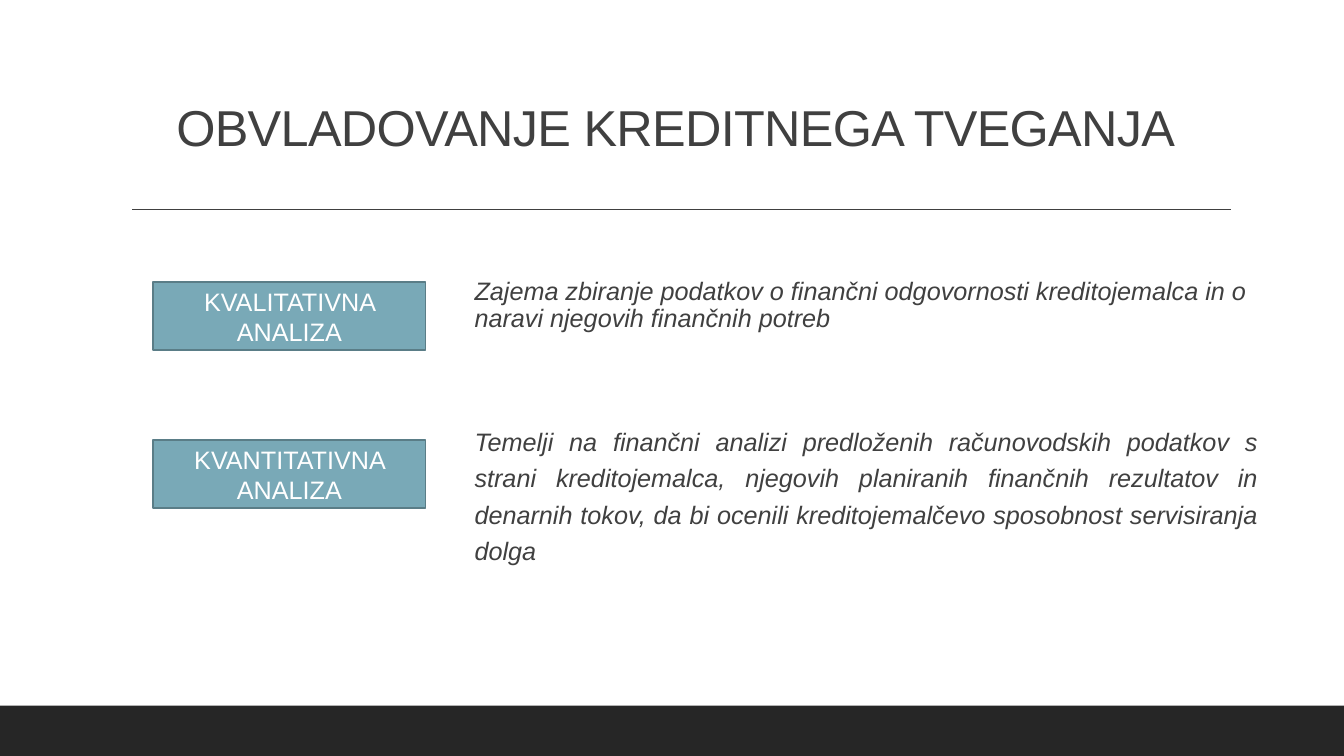
import pptx
import pptx.util
import pptx.dml.color
import pptx.enum.shapes
import pptx.enum.text
import pptx.oxml

Pt = pptx.util.Pt
Align = pptx.enum.text.PP_ALIGN
Anchor = pptx.enum.text.MSO_ANCHOR
Shape = pptx.enum.shapes.MSO_SHAPE
Line = pptx.enum.shapes.MSO_CONNECTOR


def color(code):
    return pptx.dml.color.RGBColor.from_string(code)


def apply(item, values):
    for name, value in values.items():
        setattr(item, name, value)


class Page:
    ink = "404040"
    teal = "79A9B7"
    edge = "5A7D87"
    dark = "262626"
    white = "FFFFFF"
    face = "Arial"

    def __init__(self, slide):
        self.slide = slide

    def text(self, frame, lines, tone, font, para):
        frame.word_wrap = True
        for index, line in enumerate(lines):
            part = frame.paragraphs[0] if index == 0 else frame.add_paragraph()
            apply(part, para)
            run = part.add_run()
            run.text = line
            apply(run.font, {"name": self.face, **font})
            run.font.color.rgb = color(tone)

    def rect(self, left, top, width, height, fill, edge=None):
        shape = self.slide.shapes.add_shape(
            Shape.RECTANGLE, Pt(left), Pt(top), Pt(width), Pt(height))
        shape.shadow.inherit = False
        shape.fill.solid()
        shape.fill.fore_color.rgb = color(fill)
        if edge:
            shape.line.color.rgb = color(edge)
            shape.line.width = Pt(1.25)
        else:
            shape.line.fill.background()
        return shape

    def label(self, top, words):
        shape = self.rect(109.5, top, 194.5, 48.5, self.teal, self.edge)
        shape.text_frame.vertical_anchor = Anchor.MIDDLE
        self.text(shape.text_frame, [words], self.white,
                  {"size": Pt(18)}, {"alignment": Align.CENTER})

    def rule(self, left, top, right):
        line = self.slide.shapes.add_connector(
            Line.STRAIGHT, Pt(left), Pt(top), Pt(right), Pt(top))
        line.line.color.rgb = color(self.ink)
        line.line.width = Pt(1)
        props = line._element.spPr
        props.append(pptx.oxml.parse_xml(
            '<a:effectLst xmlns:a="http://schemas.openxmlformats.org/drawingml/2006/main"/>'))

    def box(self, left, top, width, height):
        return self.slide.shapes.add_textbox(
            Pt(left), Pt(top), Pt(width), Pt(height)).text_frame

    def title(self, words):
        frame = self.box(86.5, 22.5, 792, 93.5)
        frame.vertical_anchor = Anchor.BOTTOM
        self.text(frame, [words], self.ink, {"size": Pt(36)},
                  {"alignment": Align.CENTER, "line_spacing": 0.9})
        run = frame.paragraphs[0].runs[0]
        run._r.get_or_add_rPr().set("spc", "-50")

    def body(self, top, height, pitch, lines):
        frame = self.box(339, top, 559.5, height)
        apply(frame, {"margin_left": 0, "margin_right": 0,
                      "margin_top": 0, "margin_bottom": 0})
        self.text(frame, lines, self.ink, {"size": Pt(18), "italic": True},
                  {"alignment": Align.JUSTIFY, "line_spacing": Pt(pitch)})


def main():
    deck = pptx.Presentation()
    apply(deck, {"slide_width": Pt(960), "slide_height": Pt(540)})
    page = Page(deck.slides.add_slide(deck.slide_layouts[6]))
    page.rect(0, 504, 960, 36, page.dark)
    page.rule(94.5, 149.5, 879)
    page.title("OBVLADOVANJE KREDITNEGA TVEGANJA")
    page.body(199.5, 40, 19, [
        "Zajema zbiranje podatkov o finančni odgovornosti kreditojemalca in o",
        "naravi njegovih finančnih potreb"])
    page.body(300, 106, 26, [
        "Temelji na finančni analizi predloženih računovodskih podatkov s "
        "strani kreditojemalca, njegovih planiranih finančnih rezultatov in "
        "denarnih tokov, da bi ocenili kreditojemalčevo sposobnost "
        "servisiranja dolga"])
    for top, words in [(201.5, "KVALITATIVNA ANALIZA"),
                       (314.5, "KVANTITATIVNA ANALIZA")]:
        page.label(top, words)
    deck.save("out.pptx")


if __name__ == "__main__":
    main()
